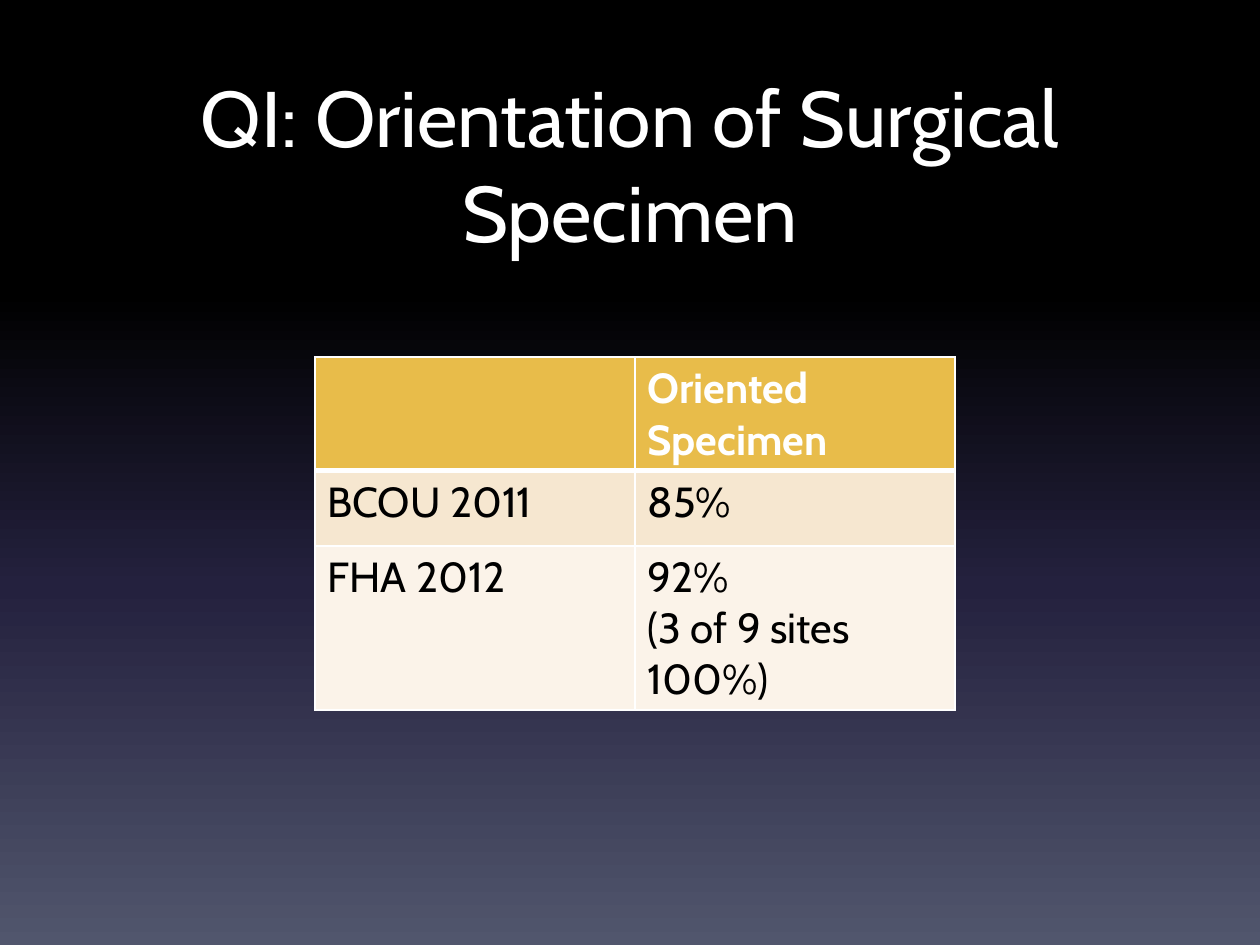
from lxml import etree
from pptx import Presentation
from pptx.dml.color import RGBColor
from pptx.enum import text
from pptx.oxml import ns
from pptx.util import Cm, Pt

FONT = "Cabin"
WHITE, BLACK, GOLD = "FFFFFF", "000000", "E8BC4A"
SKY = [(0, BLACK), (31, BLACK), (62, "24213E"), (100, "51566D")]
ROWS = [
    (1.85, GOLD, WHITE, True, ["", "Oriented Specimen"]),
    (1.52, "F6E7D0", BLACK, False, ["BCOU 2011", "85%"]),
    (1.52, "FBF3E9", BLACK, False, ["FHA 2012", "92%\n(3 of 9 sites 100%)"]),
]


def rgb(value):
    return RGBColor.from_string(value)


def style(p, size, color, bold=False):
    p.font.name = FONT
    p.font.size = Pt(size)
    p.font.bold = bold
    p.font.color.rgb = rgb(color)


def add_color(parent, color):
    etree.SubElement(parent, ns.qn("a:srgbClr"), val=color)


def set_background(slide):
    fill = slide.background.fill
    fill.gradient()
    fill.gradient_angle = 270
    stops = next(slide.element.iter(ns.qn("a:gsLst")))
    for stop in list(stops):
        stops.remove(stop)
    for pos, color in SKY:
        add_color(etree.SubElement(stops, ns.qn("a:gs"), pos=str(pos * 1000)), color)


def add_title(slide, left, top, width, height):
    sp = slide.shapes.add_textbox(Cm(left), Cm(top), Cm(width), Cm(height))
    tf = sp.text_frame
    tf.word_wrap = True
    tf.vertical_anchor = text.MSO_ANCHOR.TOP
    p = tf.paragraphs[0]
    p.text = "QI: Orientation of Surgical Specimen"
    p.alignment = text.PP_ALIGN.CENTER
    style(p, 45, WHITE)


def set_borders(cell, widths):
    props = cell._tc.get_or_add_tcPr()
    for side, width in widths.items():
        line = etree.SubElement(props, ns.qn(f"a:ln{side}"), w=str(Pt(width)))
        add_color(etree.SubElement(line, ns.qn("a:solidFill")), WHITE)


def add_results(slide, left, top, width, height):
    frame = slide.shapes.add_table(
        len(ROWS), 2, Cm(left), Cm(top), Cm(width), Cm(height))
    table = frame.table
    for column in table.columns:
        column.width = Cm(width / 2)
    for i, (row_height, fill, color, bold, values) in enumerate(ROWS):
        table.rows[i].height = Cm(row_height)
        for cell, value in zip(table.rows[i].cells, values):
            set_borders(cell, {"L": 1, "R": 1,
                               "T": 3 if i == 1 else 1,
                               "B": 3 if i == 0 else 1})
            cell.fill.solid()
            cell.fill.fore_color.rgb = rgb(fill)
            cell.text = value
            for p in cell.text_frame.paragraphs:
                style(p, 24, color, bold)


def main():
    prs = Presentation()
    prs.slide_width, prs.slide_height = Cm(25.4), Cm(19.05)
    slide = prs.slides.add_slide(prs.slide_layouts[6])
    set_background(slide)
    add_title(slide, 1.27, 1.27, 22.86, 3.18)
    add_results(slide, 6.35, 7.2, 12.9, 4.89)
    prs.save("out.pptx")


if __name__ == "__main__":
    main()
